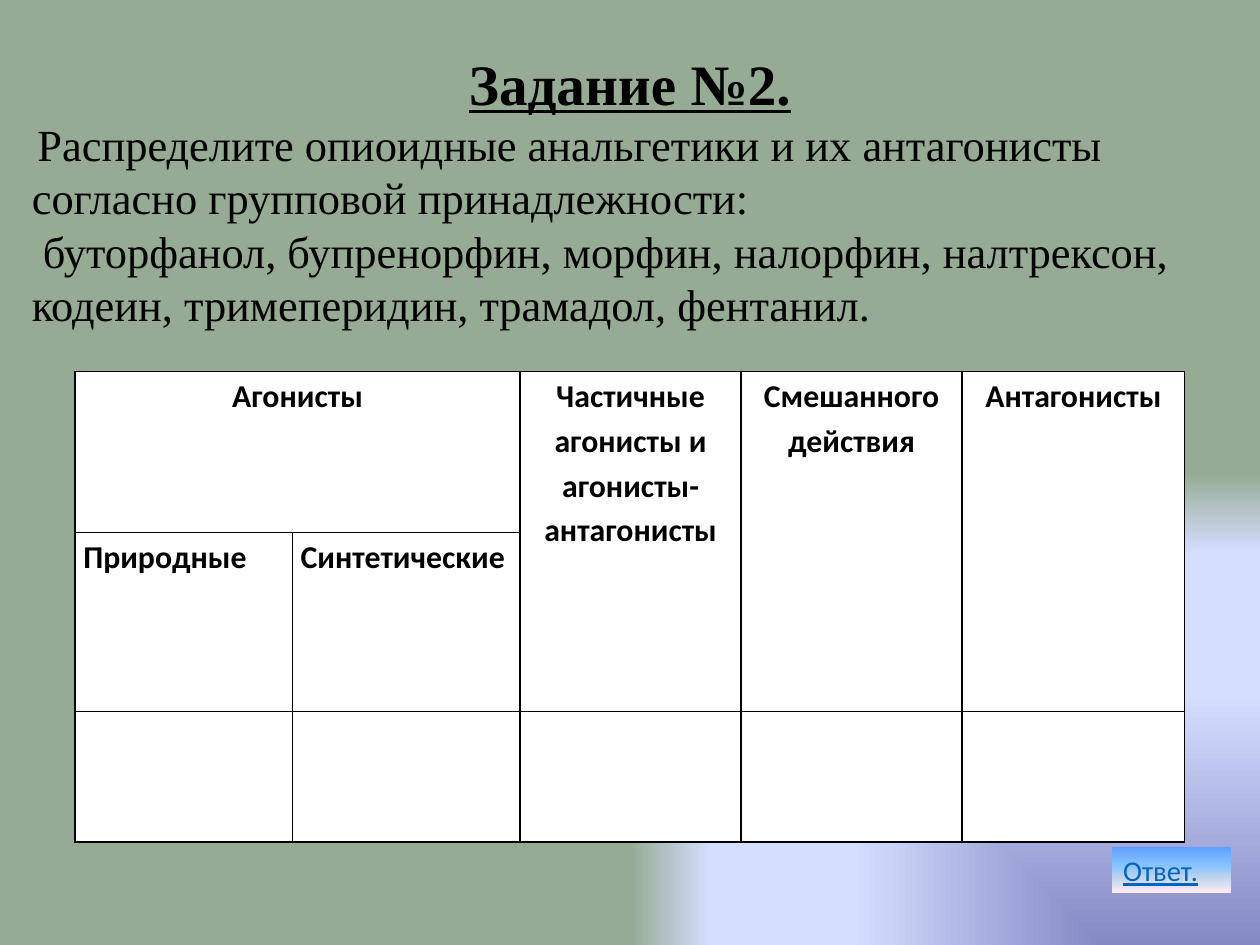
from lxml import etree
from pptx import Presentation
from pptx.dml.color import RGBColor
from pptx.enum.shapes import MSO_SHAPE
from pptx.enum.text import MSO_ANCHOR, PP_ALIGN
from pptx.oxml.ns import qn
from pptx.util import Cm, Pt

RECTANGLE = MSO_SHAPE.RECTANGLE
TOP = MSO_ANCHOR.TOP
LEFT, CENTER = PP_ALIGN.LEFT, PP_ALIGN.CENTER

BLACK = RGBColor(0x00, 0x00, 0x00)
WHITE = RGBColor(0xFF, 0xFF, 0xFF)
LINK_BLUE = RGBColor(0x05, 0x63, 0xC1)
PERIWINKLE = RGBColor(0x84, 0x88, 0xC4)
PALE_BLUE = RGBColor(0xD4, 0xDE, 0xFF)
SAGE = RGBColor(0x96, 0xAB, 0x94)
SKY = RGBColor(0x5E, 0x9E, 0xFF)
LIGHT_SKY = RGBColor(0x85, 0xC2, 0xFF)
MIST = RGBColor(0xC4, 0xD6, 0xEB)
BLUSH = RGBColor(0xFF, 0xEB, 0xFA)

BACKGROUND_STOPS = [(0, PERIWINKLE), (53, PALE_BLUE), (83, PALE_BLUE), (100, SAGE)]
BUTTON_STOPS = [(0, SKY), (40, LIGHT_SKY), (70, MIST), (100, BLUSH)]

TITLE_FONT = {"name": "Times New Roman", "size": Pt(36), "bold": True, "underline": True}
TASK_FONT = {"name": "Times New Roman", "size": Pt(28)}
INDENT_FONT = {"name": "Times New Roman", "size": Pt(14)}
HEADER_FONT = {"name": "Calibri", "size": Pt(20), "bold": True}
BUTTON_FONT = {"name": "Calibri", "size": Pt(18), "underline": True}

TASK_PARAGRAPHS = [
    (CENTER, [("Задание №2.", TITLE_FONT)]),
    (LEFT, [
        (" ", INDENT_FONT),
        ("Распределите опиоидные анальгетики и их антагонисты "
         "согласно групповой принадлежности:", TASK_FONT),
    ]),
    (LEFT, [
        (" буторфанол, бупренорфин, морфин, налорфин, налтрексон, "
         "кодеин, тримеперидин, трамадол, фентанил.", TASK_FONT),
    ]),
]

COLUMN_WIDTHS = [4.83, 5.06, 4.91, 4.91, 4.95]
ROW_HEIGHTS = [3.58, 2.51, 2.9]
MERGES = [((0, 0), (0, 1))] + [((0, column), (1, column)) for column in (2, 3, 4)]
HEADERS = {
    (0, 0): ("Агонисты", CENTER),
    (0, 2): ("Частичные агонисты и агонисты-антагонисты", CENTER),
    (0, 3): ("Смешанного действия", CENTER),
    (0, 4): ("Антагонисты", CENTER),
    (1, 0): ("Природные", LEFT),
    (1, 1): ("Синтетические", LEFT),
}
HEADER_PARAGRAPH = {"line_spacing": 1.15, "space_after": Pt(10)}
HEADER_MARGINS = {
    "margin_left": Cm(0.18),
    "margin_right": Cm(0.18),
    "margin_top": 0,
    "margin_bottom": 0,
}


def apply_format(target, values):
    """Set every attribute named in values on the target."""
    for name, value in values.items():
        setattr(target, name, value)


def add_run(paragraph, text, font_format, color=BLACK):
    """Append a formatted run to a paragraph."""
    run = paragraph.add_run()
    run.text = text
    apply_format(run.font, font_format)
    run.font.color.rgb = color


def add_solid_fill(parent, color):
    """Append a solid fill element to the parent."""
    fill = etree.SubElement(parent, qn("a:solidFill"))
    etree.SubElement(fill, qn("a:srgbClr"), val=str(color))


def set_gradient(element, stops):
    """Give the first gradient in the element new stops and return it."""
    gradient = element.find(".//" + qn("a:gradFill"))
    for child in list(gradient):
        gradient.remove(child)
    stop_list = etree.SubElement(gradient, qn("a:gsLst"))
    for percent, color in stops:
        stop = etree.SubElement(stop_list, qn("a:gs"), pos=str(percent * 1000))
        etree.SubElement(stop, qn("a:srgbClr"), val=str(color))
    return gradient


def paint_background(slide):
    """Fill the slide with a gradient spreading from the lower right corner."""
    slide.background.fill.gradient()
    gradient = set_gradient(slide.element, BACKGROUND_STOPS)
    shade = etree.SubElement(gradient, qn("a:path"), path="rect")
    etree.SubElement(shade, qn("a:fillToRect"), l="100000", t="100000")


def set_borders(cell):
    """Draw a thin black line on all four sides of a cell."""
    properties = cell._tc.get_or_add_tcPr()
    for index, side in enumerate(("a:lnL", "a:lnR", "a:lnT", "a:lnB")):
        line = etree.Element(qn(side), w=str(Pt(1)))
        add_solid_fill(line, BLACK)
        properties.insert(index, line)


def add_groups_table(slide):
    """Add the table of drug groups with its merged headers."""
    frame = slide.shapes.add_table(
        len(ROW_HEIGHTS), len(COLUMN_WIDTHS), Cm(1.67), Cm(8.26),
        Cm(sum(COLUMN_WIDTHS)), Cm(sum(ROW_HEIGHTS)))
    table = frame.table
    apply_format(table, {"first_row": False, "horz_banding": False})
    for column, width in zip(table.columns, COLUMN_WIDTHS):
        column.width = Cm(width)
    for row, height in zip(table.rows, ROW_HEIGHTS):
        row.height = Cm(height)
    for first, last in MERGES:
        table.cell(*first).merge(table.cell(*last))
    for cell in table.iter_cells():
        cell.fill.solid()
        cell.fill.fore_color.rgb = WHITE
        set_borders(cell)
    for position, (text, alignment) in HEADERS.items():
        cell = table.cell(*position)
        apply_format(cell, HEADER_MARGINS)
        paragraph = cell.text_frame.paragraphs[0]
        apply_format(paragraph, {"alignment": alignment, **HEADER_PARAGRAPH})
        add_run(paragraph, text, HEADER_FONT)


def add_task_text(slide):
    """Add the title and the wording of the task."""
    box = slide.shapes.add_textbox(Cm(0.46), Cm(0.95), Cm(27.08), Cm(6.5))
    text_frame = box.text_frame
    apply_format(text_frame, {"word_wrap": True, "vertical_anchor": TOP})
    for index, (alignment, runs) in enumerate(TASK_PARAGRAPHS):
        paragraph = text_frame.add_paragraph() if index else text_frame.paragraphs[0]
        paragraph.alignment = alignment
        for text, font_format in runs:
            add_run(paragraph, text, font_format)


def add_answer_button(slide):
    """Add the gradient answer button."""
    button = slide.shapes.add_shape(RECTANGLE, Cm(24.71), Cm(18.82), Cm(2.64), Cm(1.02))
    button.shadow.inherit = False
    button.line.fill.background()
    button.fill.gradient()
    gradient = set_gradient(button.element, BUTTON_STOPS)
    etree.SubElement(gradient, qn("a:lin"), ang="5400000", scaled="0")
    apply_format(button.text_frame, {"word_wrap": True, "vertical_anchor": TOP})
    paragraph = button.text_frame.paragraphs[0]
    paragraph.alignment = LEFT
    add_run(paragraph, "Ответ.", BUTTON_FONT, LINK_BLUE)


def main():
    """Build the task slide and save it."""
    presentation = Presentation()
    apply_format(presentation, {"slide_width": Cm(28), "slide_height": Cm(21)})
    slide = presentation.slides.add_slide(presentation.slide_layouts[6])
    paint_background(slide)
    add_groups_table(slide)
    add_task_text(slide)
    add_answer_button(slide)
    presentation.save("out.pptx")


if __name__ == "__main__":
    main()
